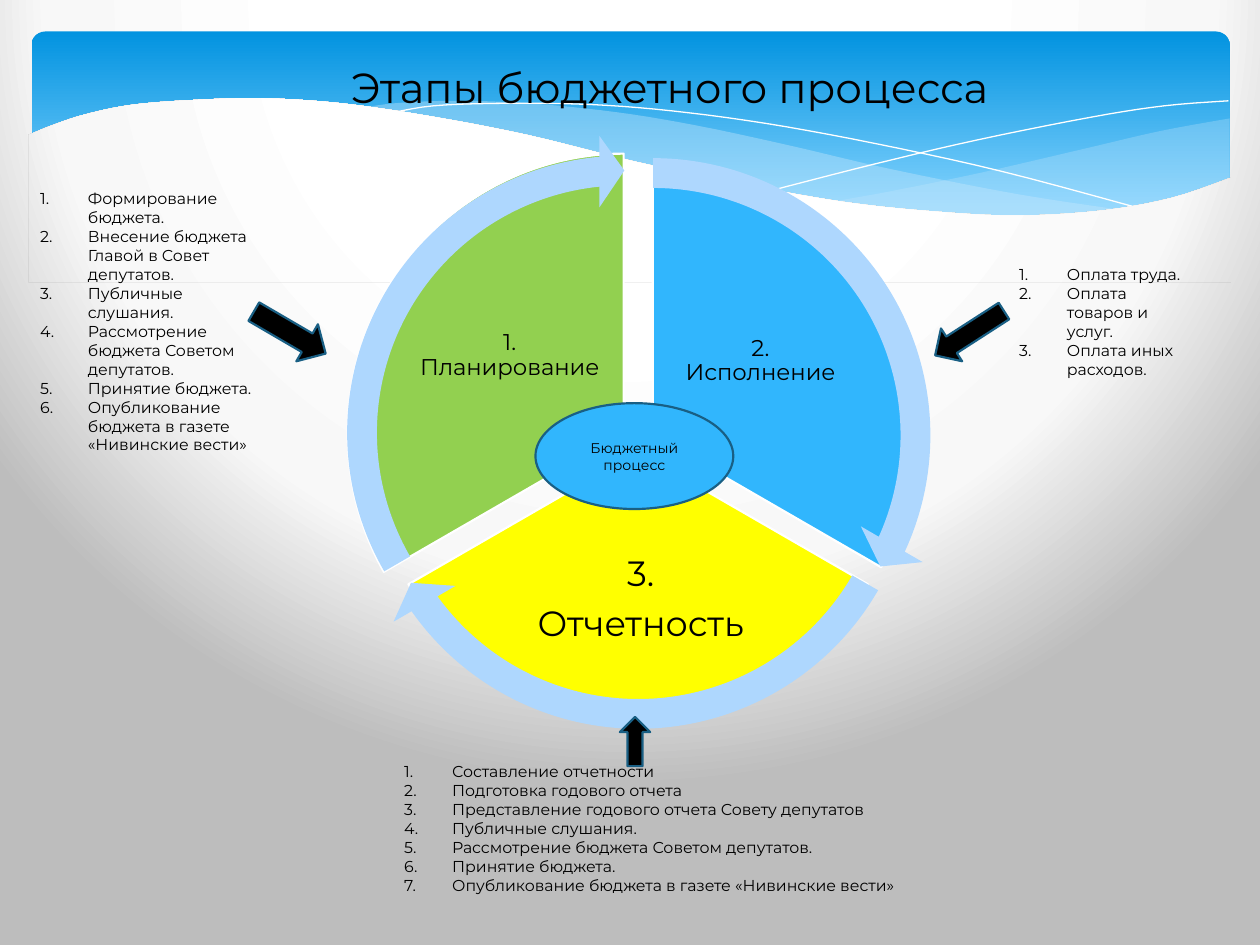
from lxml import etree
from pptx import Presentation
from pptx.dml.color import RGBColor
from pptx.enum.shapes import MSO_SHAPE as Kind
from pptx.enum.text import MSO_ANCHOR as Anchor, PP_ALIGN as Align
from pptx.oxml import parse_xml
from pptx.oxml.ns import nsdecls, qn
from pptx.util import Inches, Pt

FONT = "Montserrat"
BLUE, PALE, EDGE = "31B6FD", "AED7FE", "195F84"
GLOW = [(40, "FFFFFF"), (74, "F8F8F8"), (100, "BDBDBD")]
RADIAL = ('<a:path path="circle"><a:fillToRect l="20000" t="-40000" '
          'r="20000" b="140000"/></a:path>')
DOWN = '<a:lin ang="5400000" scaled="0"/>'

# Knots of the wave curves in the header, in inches
CREST = [(9.76, 0.94), (9.21, 1.04), (8.61, 1.18), (7.79, 1.37), (7.06, 1.52), (6.61, 1.6)]
TROUGH = [(6.61, 1.6), (7.19, 1.67), (7.92, 1.72), (8.44, 1.71), (8.97, 1.65),
          (9.42, 1.54), (9.76, 1.41)]
BAND_TOP = [(8.93, 1.67), (8.07, 1.54), (7.06, 1.34), (6.29, 1.16), (5.55, 1),
            (4.89, 0.89), (4.2, 0.82), (3.61, 0.8), (3.13, 0.82), (2.86, 0.86)]
BAND_LOW = [(2.86, 0.86), (3.42, 0.94), (4.04, 1.06), (4.91, 1.26), (5.66, 1.43),
            (6.34, 1.56), (6.95, 1.65), (7.61, 1.71), (8.18, 1.73), (8.93, 1.67)]
LONG = [(3.09, 0.9), (3.44, 0.84), (4.01, 0.82), (4.69, 0.83), (5.33, 0.88),
        (6.08, 0.98), (6.95, 1.14), (7.95, 1.36), (9.07, 1.66)]
SHORT = [(6.13, 1.51), (6.95, 1.3), (7.76, 1.11), (8.66, 0.93), (9.24, 0.84), (9.75, 0.8)]
SWELL = [(9.77, 1.41), (9.3, 1.57), (8.75, 1.67), (8.09, 1.71), (7.44, 1.68),
         (6.68, 1.6), (5.79, 1.44), (5.03, 1.28), (4.18, 1.07), (3.4, 0.92),
         (2.71, 0.82), (2.11, 0.78), (1.61, 0.79), (1.06, 0.83), (0.67, 0.91),
         (0.4, 1), (0.23, 1.07)]

PLAN = ["Формирование бюджета.", "Внесение бюджета Главой в Совет депутатов.",
        "Публичные слушания.", "Рассмотрение бюджета Советом депутатов.",
        "Принятие бюджета.", "Опубликование бюджета в газете «Нивинские вести»"]
SPEND = ["Оплата труда.", "Оплата товаров и услуг.", "Оплата иных расходов."]
REPORT = ["Составление отчетности", "Подготовка годового отчета",
          "Представление годового отчета Совету депутатов", *PLAN[2:]]


def color(text):
    return RGBColor.from_string(text)


def blend(fill, root, stops, shade):
    """Swap the fill found under root for a gradient."""
    fill.solid()
    marks = "".join(f'<a:gs pos="{pos * 1000}"><a:srgbClr val="{tint}"/></a:gs>'
                    for pos, tint in stops)
    old = next(root.iter(qn("a:solidFill")))
    old.getparent().replace(old, parse_xml(
        f'<a:gradFill {nsdecls("a")} rotWithShape="1">'
        f'<a:gsLst>{marks}</a:gsLst>{shade}</a:gradFill>'))


def show_back(item):
    """Fill the shape with the slide background."""
    root = item.element
    root.set("useBgFill", "1")
    root.spPr.remove(root.spPr.find(qn("a:noFill")))
    root.remove(root.find(qn("p:style")))


def paint(item, fill=None, line=None, width=1.25):
    item.shadow.inherit = False
    if fill:
        item.fill.solid()
        item.fill.fore_color.rgb = color(fill)
    else:
        item.fill.background()
    if line:
        item.line.color.rgb = color(line)
        item.line.width = Pt(width)
    else:
        item.line.fill.background()


def add_shape(slide, kind, box, fill, line=None, adj=(), turn=0):
    item = slide.shapes.add_shape(kind, *map(Inches, box))
    for i, value in enumerate(adj):
        item.adjustments[i] = value
    item.rotation = turn
    paint(item, fill, line)
    return item


def curve(knots, steps=5):
    """Points of a Catmull-Rom curve through the knots."""
    ends = [knots[0], *knots, knots[-1]]
    points = [knots[0]]
    for a, b, c, d in zip(ends, ends[1:], ends[2:], ends[3:]):
        for n in range(1, steps + 1):
            t = n / steps
            points.append(tuple(
                (2 * q + (r - p) * t + (2 * p - 5 * q + 4 * r - s) * t ** 2
                 + (3 * q - p - 3 * r + s) * t ** 3) / 2
                for p, q, r, s in zip(a, b, c, d)))
    return points


def add_wave(slide, points, fill=None, line=None, alpha=None):
    spots = [(Inches(x), Inches(y)) for x, y in points]
    pen = slide.shapes.build_freeform(*spots[0])
    pen.add_line_segments(spots[1:], close=line is None)
    item = pen.convert_to_shape()
    paint(item, fill, line, 0)
    if alpha:
        tint = next(item.element.spPr.iter(qn("a:srgbClr")))
        etree.SubElement(tint, qn("a:alpha")).set("val", str(alpha * 1000))
    return item


def write(item, lines, size, align=Align.CENTER, inset=None):
    frame = item.text_frame
    frame.word_wrap = True
    if inset is not None:
        frame.margin_left = frame.margin_right = Inches(inset)
        frame.margin_top = frame.margin_bottom = Inches(inset)
    for i, text in enumerate(lines):
        para = frame.add_paragraph() if i else frame.paragraphs[0]
        para.text = text
        para.alignment = align
        para.font.size = Pt(size)
        para.font.name = FONT
        para.font.color.rgb = color("000000")
    return frame


def add_text(slide, box, *args, **kwargs):
    return write(slide.shapes.add_textbox(*map(Inches, box)), *args, **kwargs)


def add_list(slide, box, lines):
    for para in add_text(slide, box, lines, 9, Align.LEFT).paragraphs:
        props = para._p.get_or_add_pPr()
        props.set("marL", str(Inches(0.38)))
        props.set("indent", str(Inches(-0.38)))
        mark = parse_xml(f'<a:buAutoNum {nsdecls("a")} type="arabicPeriod"/>')
        props.insert_element_before(mark, "a:tabLst", "a:defRPr", "a:extLst")


def add_label(slide, box, lines, size):
    frame = add_text(slide, box, lines, size, inset=0.02)
    frame.vertical_anchor = Anchor.MIDDLE
    for para in frame.paragraphs:
        para.line_spacing = 0.9
    for para in frame.paragraphs[:-1]:
        para.space_after = Pt(0.35 * size)


def add_header(slide):
    blend(slide.background.fill, slide.element, GLOW, RADIAL)
    panel = add_shape(slide, Kind.ROUNDED_RECTANGLE, (0.25, 0.25, 9.51, 1.56), BLUE, adj=[0.07])
    blend(panel.fill, panel.element.spPr, [(0, "0293E0"), (90, "83D3FE")], DOWN)
    add_wave(slide, curve(CREST) + curve(TROUGH), "C6E7FC", alpha=29)
    add_wave(slide, curve(BAND_TOP) + curve(BAND_LOW), "C6E7FC", alpha=40)
    for knots in (LONG, SHORT):
        add_wave(slide, curve(knots), line="FFFFFF")
    show_back(add_wave(slide, curve(SWELL) + [(0.23, 2.24), (9.77, 2.24)]))


def add_wheel(slide):
    # A slice's angles are in units of 5/3 degree
    for box, fill, angles, spot, lines, size in (
            ((3.09, 1.35, 4.18, 4.21), BLUE, (162, 18),
             (5.29, 2.24, 1.49, 1.25), ["2.\vИсполнение"], 13),
            ((2.96, 1.48, 4.21, 4.21), "FFFF00", (18, 90),
             (3.96, 4.21, 2.25, 1.1), ["3.", "Отчетность"], 20),
            ((2.76, 1.22, 4.38, 4.44), "92D050", (90, 162),
             (3.26, 2.16, 1.57, 1.32), ["1.\vПланирование"], 13)):
        add_shape(slide, Kind.PIE, box, fill, "FFFFFF", angles)
        add_label(slide, spot, lines, size)
    for left, top, head, tail in ((2.82, 1.09, 14.73, 161.99),
                                  (2.7, 1.22, 86.72, 18.01),
                                  (2.59, 1.07, 158.73, 90)):
        add_shape(slide, Kind.CIRCULAR_ARROW, (left, top, 4.73, 4.73), PALE,
                  adj=(0.05, 3.28, head, tail, 0.06))
    hub = add_shape(slide, Kind.OVAL, (4.25, 3.2, 1.57, 0.84), BLUE, EDGE)
    write(hub, ["Бюджетный процесс"], 8).vertical_anchor = Anchor.MIDDLE


def main():
    deck = Presentation()
    deck.slide_width, deck.slide_height = Inches(10), Inches(7.5)
    slide = deck.slides.add_slide(deck.slide_layouts[6])
    add_header(slide)
    add_wheel(slide)
    for box, lines in (((0.22, 1.45, 1.9, 2.23), PLAN),
                       ((7.99, 2.05, 1.5, 1.01), SPEND),
                       ((3.11, 6, 4.59, 1.16), REPORT)):
        add_list(slide, box, lines)
    for kind, box, turn in ((Kind.RIGHT_ARROW, (1.97, 2.47, 0.66, 0.34), 30.3),
                            (Kind.DOWN_ARROW, (7.54, 2.32, 0.31, 0.65), 57.2),
                            (Kind.UP_ARROW, (4.92, 5.69, 0.24, 0.39), 0)):
        add_shape(slide, kind, box, "000000", EDGE, turn=turn)
    add_text(slide, (1.38, 0.44, 7.87, 0.5), ["Этапы бюджетного процесса"], 24)
    deck.save("out.pptx")


if __name__ == "__main__":
    main()
